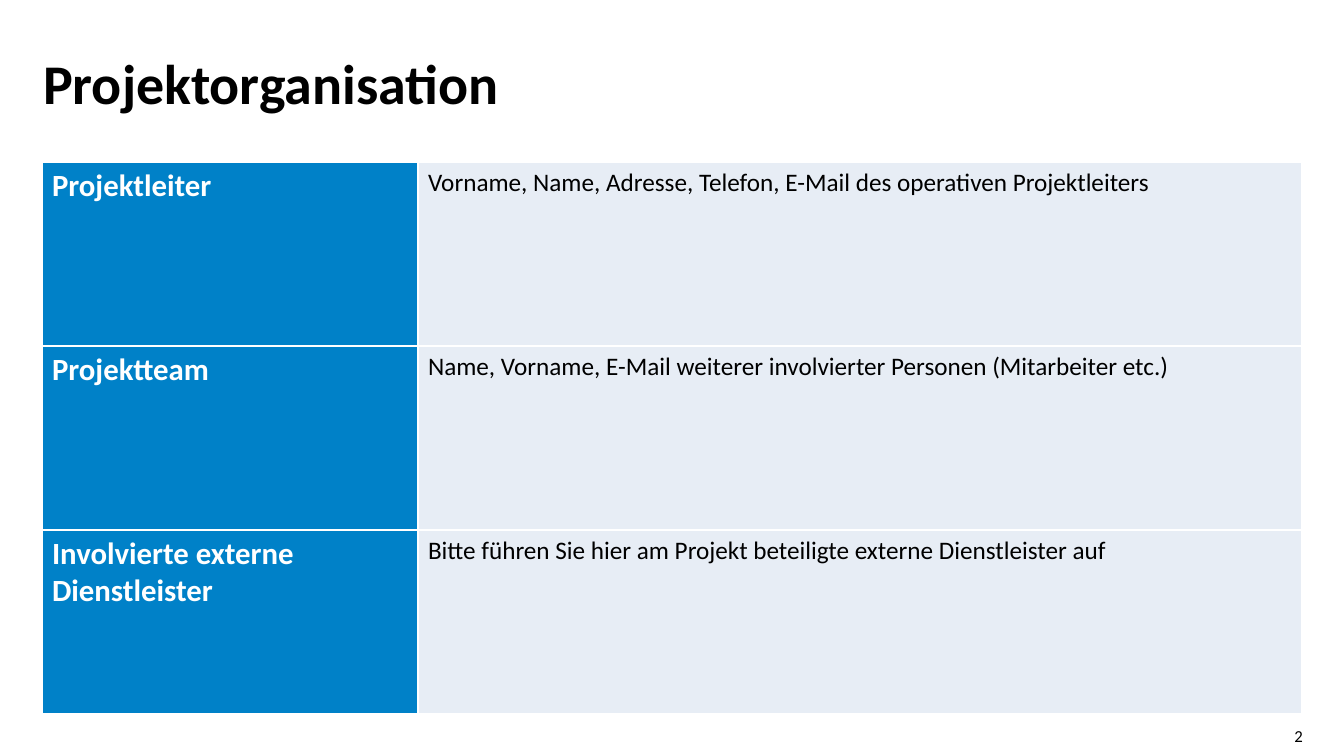
from lxml import etree
from pptx import Presentation
from pptx.dml.color import RGBColor
from pptx.enum.text import MSO_ANCHOR, PP_ALIGN
from pptx.oxml.ns import qn
from pptx.util import Emu, Pt

TOP = MSO_ANCHOR.TOP
MIDDLE = MSO_ANCHOR.MIDDLE
LEFT = PP_ALIGN.LEFT
RIGHT = PP_ALIGN.RIGHT

PX_PER_INCH = 100.8
TITLE_ONLY = 5
COLORS = {"text": "000000", "label": "0081C8", "detail": "E7EDF5", "white": "FFFFFF"}
ROWS = [
    ("Projektleiter", "Vorname, Name, Adresse, Telefon, E-Mail des operativen Projektleiters"),
    ("Projektteam", "Name, Vorname, E-Mail weiterer involvierter Personen (Mitarbeiter etc.)"),
    ("Involvierte externe Dienstleister",
     "Bitte führen Sie hier am Projekt beteiligte externe Dienstleister auf"),
]


def px(length):
    return Emu(round(length * 914400 / PX_PER_INCH))


def color(name):
    return RGBColor.from_string(COLORS[name])


class SlideBuilder:
    font_name = "Calibri"

    def __init__(self, slide):
        self.slide = slide

    def set_text(self, text_frame, text, size, color_name="text", bold=False, align=LEFT):
        text_frame.text = text
        paragraph = text_frame.paragraphs[0]
        paragraph.alignment = align
        font = paragraph.runs[0].font
        font.name = self.font_name
        font.size = Pt(size)
        font.bold = bold
        font.color.rgb = color(color_name)
        return paragraph

    def frame(self, shape, anchor):
        """Give a shape's text frame wrapping, no margins and an anchor."""
        text_frame = shape.text_frame
        text_frame.word_wrap = True
        text_frame.vertical_anchor = anchor
        text_frame.margin_left = text_frame.margin_right = 0
        text_frame.margin_top = text_frame.margin_bottom = 0
        return text_frame

    def title(self, text, left, top, width, height):
        shape = self.slide.shapes.title
        shape.left, shape.top = px(left), px(top)
        shape.width, shape.height = px(width), px(height)
        paragraph = self.set_text(self.frame(shape, TOP), text, 40, bold=True)
        paragraph.line_spacing = 0.9

    def slide_number(self, text, left, top, width, height):
        shape = self.slide.shapes.add_textbox(px(left), px(top), px(width), px(height))
        self.set_text(self.frame(shape, MIDDLE), text, 12, align=RIGHT)

    def border(self, cell):
        properties = cell._tc.get_or_add_tcPr()
        for side in ("a:lnL", "a:lnR", "a:lnT", "a:lnB"):
            line = etree.SubElement(properties, qn(side), w=str(Pt(1)))
            fill = etree.SubElement(line, qn("a:solidFill"))
            etree.SubElement(fill, qn("a:srgbClr"), val=COLORS["white"])

    def cell(self, cell, text, size, fill_name, color_name, bold):
        self.border(cell)
        cell.fill.solid()
        cell.fill.fore_color.rgb = color(fill_name)
        self.set_text(cell.text_frame, text, size, color_name, bold)

    def table(self, rows, left, top, column_widths, row_height):
        """Add a table of bold labels on the left and details on the right."""
        table = self.slide.shapes.add_table(
            len(rows), len(column_widths), px(left), px(top),
            px(sum(column_widths)), px(row_height * len(rows))).table
        table.first_row = table.horz_banding = False
        table.first_col = True
        for column, width in zip(table.columns, column_widths):
            column.width = px(width)
        for index, (label, detail) in enumerate(rows):
            table.rows[index].height = px(row_height)
            self.cell(table.cell(index, 0), label, 22, "label", "white", True)
            self.cell(table.cell(index, 1), detail, 18, "detail", "text", False)


def main():
    presentation = Presentation()
    presentation.slide_width, presentation.slide_height = px(1344), px(756)
    slide = presentation.slides.add_slide(presentation.slide_layouts[TITLE_ONLY])
    builder = SlideBuilder(slide)
    builder.title("Projektorganisation", 43, 56, 1008, 86)
    builder.table(ROWS, 42, 162, (376, 884), 184)
    builder.slide_number("2", 1256, 726, 47, 20)
    presentation.save("out.pptx")


if __name__ == "__main__":
    main()
